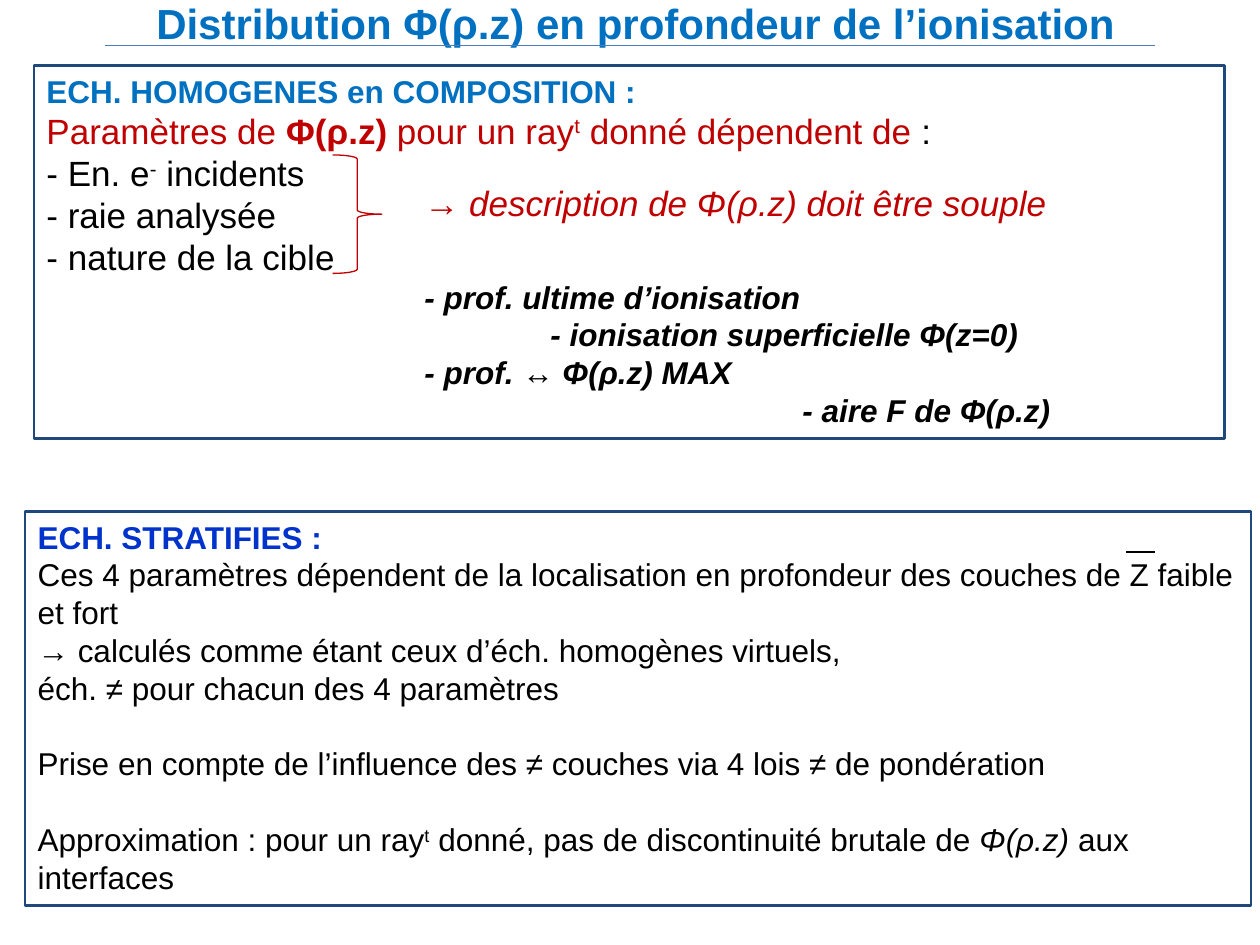
"""Builds the slide on the depth distribution of ionisation."""
from dataclasses import dataclass
from typing import Optional

from lxml import etree
from pptx import Presentation
from pptx import util as u
from pptx.dml.color import RGBColor
from pptx.enum import shapes, text
from pptx.oxml.ns import qn

BLACK = RGBColor(0x00, 0x00, 0x00)
TITLE_BLUE = RGBColor(0x00, 0x70, 0xC0)
HEADING_BLUE = RGBColor(0x00, 0x33, 0xCC)
FRAME_BLUE = RGBColor(0x1F, 0x49, 0x7D)
RULE_BLUE = RGBColor(0x4B, 0x7E, 0xBC)
RED = RGBColor(0xC0, 0x00, 0x00)


@dataclass(frozen=True)
class Span:
    wording: str
    size: float = 18
    color: RGBColor = BLACK
    bold: bool = False
    italic: bool = False
    raised: bool = False


@dataclass(frozen=True)
class Line:
    spans: tuple[Span, ...]
    indent: float = 0
    space_before: float = 0


@dataclass(frozen=True)
class Box:
    left: float
    top: float
    width: float
    height: float

    def lengths(self) -> tuple[u.Length, ...]:
        return tuple(u.Inches(v) for v in (self.left, self.top, self.width, self.height))


@dataclass(frozen=True)
class Rule:
    start: float
    end: float
    y: float
    color: RGBColor


def intro(wording: str, bold: bool = False, raised: bool = False) -> Span:
    return Span(wording, 20, RED, bold, raised=raised)


def factor(wording: str, raised: bool = False) -> Span:
    return Span(wording, 20, raised=raised)


def parameter(wording: str, indent: float) -> Line:
    return Line((Span(wording, bold=True, italic=True),), indent)


BLANK_LINE = 21.6
TITLE = Line((Span("Distribution Φ(ρ.z) en profondeur de l’ionisation", 24, TITLE_BLUE, True),))
CONCLUSION = Line((Span("→ description de Φ(ρ.z) doit être souple", 20, RED, italic=True),))
HOMOGENEOUS = (
    Line((Span("ECH. HOMOGENES en COMPOSITION :", 18, TITLE_BLUE, True),)),
    Line((intro("Paramètres de "), intro("Φ(ρ.z)", bold=True), intro(" pour un ray"),
          intro("t", raised=True), intro(" donné dépendent de"), factor(" :"))),
    Line((factor("- En. e"), factor("-", raised=True), factor(" incidents"))),
    Line((factor("- raie analysée"),)),
    Line((factor("- nature de la cible"),)),
    parameter("- prof. ultime d’ionisation", 3),
    parameter("- ionisation superficielle Φ(z=0)", 4),
    parameter("- prof. ↔ Φ(ρ.z) MAX", 3),
    parameter("- aire F de Φ(ρ.z)", 6),
)
STRATIFIED = (
    Line((Span("ECH. STRATIFIES :", 18, HEADING_BLUE, True),)),
    Line((Span("Ces 4 paramètres dépendent de la localisation en profondeur "
               "des couches de Z faible et fort"),)),
    Line((Span("→ calculés comme étant ceux d’éch. homogènes virtuels,"),)),
    Line((Span("éch. ≠ pour chacun des 4 paramètres"),)),
    Line((Span("Prise en compte de l’influence des ≠ couches via 4 lois ≠ de pondération"),),
         space_before=BLANK_LINE),
    Line((Span("Approximation : pour un ray"), Span("t", raised=True),
          Span(" donné, pas de discontinuité brutale de "),
          Span("Φ(ρ.z) ", italic=True), Span("aux interfaces")),
         space_before=BLANK_LINE),
)
PANELS = (
    (Box(0.27, 0.52, 9.45, 2.96), HOMOGENEOUS),
    (Box(0.2, 4.06, 9.73, 3.13), STRATIFIED),
)
RULES = (Rule(0.83, 9.17, 0.36, RULE_BLUE), Rule(8.94, 9.17, 4.38, BLACK))


def write(frame, lines: tuple[Line, ...], wrap: bool) -> None:
    frame.word_wrap = wrap
    frame.auto_size = text.MSO_AUTO_SIZE.SHAPE_TO_FIT_TEXT
    frame.vertical_anchor = text.MSO_ANCHOR.TOP
    for index, line in enumerate(lines):
        paragraph = frame.paragraphs[0] if index == 0 else frame.add_paragraph()
        paragraph.alignment = text.PP_ALIGN.LEFT
        paragraph.space_before = u.Pt(line.space_before)
        if line.indent:
            paragraph._p.get_or_add_pPr().set("marL", str(u.Inches(line.indent)))
        for span in line.spans:
            run = paragraph.add_run()
            run.text = span.wording
            font = run.font
            font.name, font.size = "Arial", u.Pt(span.size)
            font.bold, font.italic = span.bold, span.italic
            font.color.rgb = span.color
            if span.raised:
                run._r.get_or_add_rPr().set("baseline", "30000")


def add_outline(slide, kind, box: Box, color: RGBColor, weight: float,
                lines: Optional[tuple[Line, ...]] = None) -> None:
    outline = slide.shapes.add_shape(kind, *box.lengths())
    outline.shadow.inherit = False
    outline.fill.background()
    outline.line.color.rgb = color
    outline.line.width = u.Pt(weight)
    if lines:
        write(outline.text_frame, lines, wrap=True)


def add_rule(slide, rule: Rule) -> None:
    ends = (u.Inches(v) for v in (rule.start, rule.y, rule.end, rule.y))
    connector = slide.shapes.add_connector(shapes.MSO_CONNECTOR.STRAIGHT, *ends)
    connector.line.color.rgb = rule.color
    connector.line.width = u.Pt(0.75)
    etree.SubElement(connector._element.spPr, qn("a:effectLst"))


def main() -> None:
    deck = Presentation()
    deck.slide_width, deck.slide_height = u.Inches(10), u.Inches(7.5)
    slide = deck.slides.add_slide(deck.slide_layouts[5])

    title = slide.shapes.title
    title.left, title.top, title.width, title.height = Box(1.14, -0.07, 7.92, 0.5).lengths()
    write(title.text_frame, (TITLE,), wrap=False)

    for box, lines in PANELS:
        add_outline(slide, shapes.MSO_SHAPE.RECTANGLE, box, FRAME_BLUE, 1.5, lines)
    for rule in RULES:
        add_rule(slide, rule)

    conclusion = slide.shapes.add_textbox(*Box(3.27, 1.39, 5.15, 0.44).lengths())
    write(conclusion.text_frame, (CONCLUSION,), wrap=False)
    add_outline(slide, shapes.MSO_SHAPE.RIGHT_BRACE, Box(2.64, 1.23, 0.39, 0.94), RED, 0.75)

    deck.save("out.pptx")


if __name__ == "__main__":
    main()
